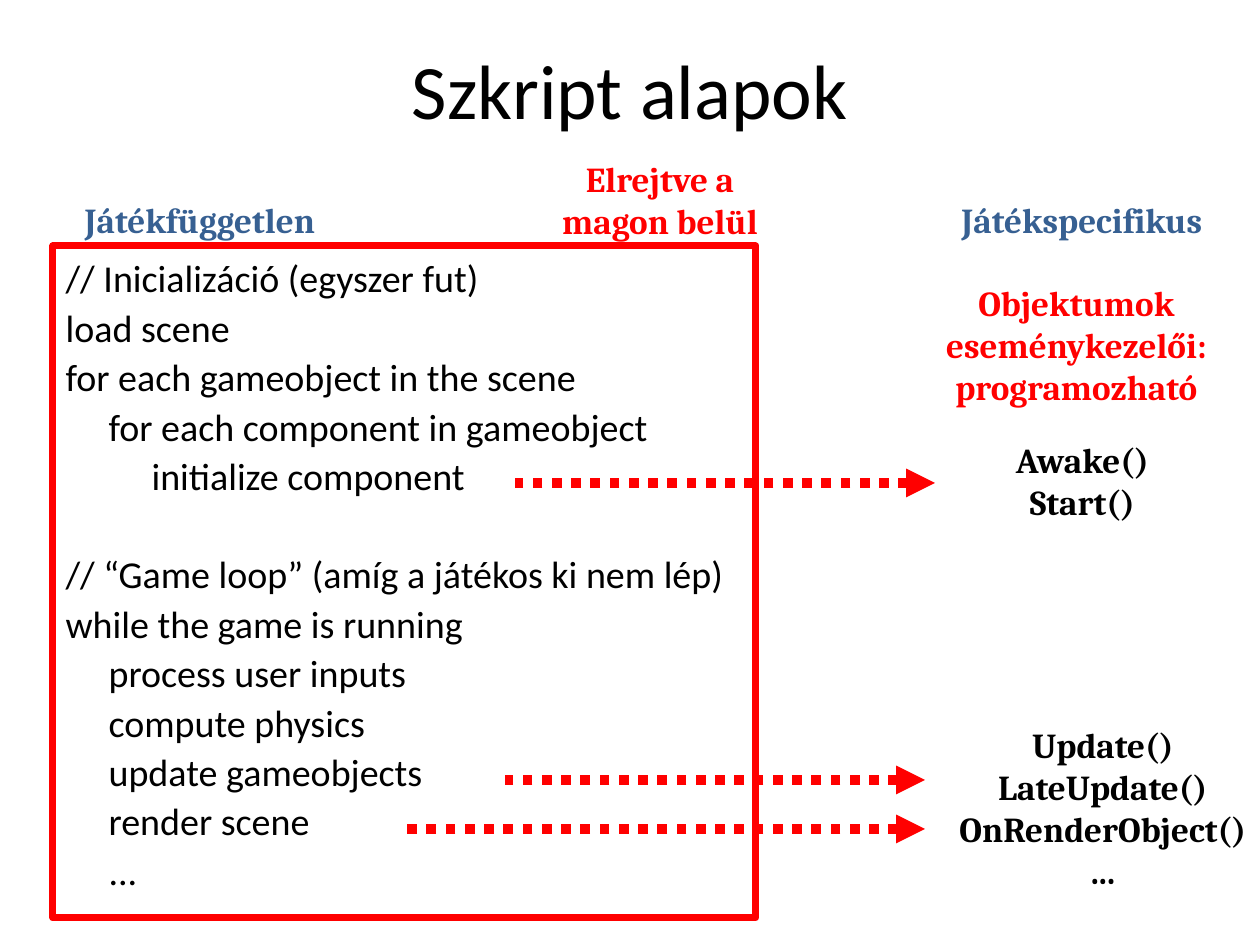
from lxml import etree
from pptx import Presentation
from pptx.dml.color import RGBColor
from pptx.enum import dml, shapes, text
from pptx.oxml.ns import qn
from pptx.util import Emu, Pt

PX = 914400 // 126
BLACK = RGBColor(0, 0, 0)
RED = RGBColor(0xFF, 0, 0)
BLUE = RGBColor(0x37, 0x60, 0x92)

TITLE = "Szkript alapok"
STEP = 43  # indent of one code level
CODE = [  # level, space before in points, line
    (0, 10, "// Inicializáció (egyszer fut)"),
    (0, 10, "load scene"),
    (0, 10, "for each gameobject in the scene"),
    (1, 10, "for each component in gameobject"),
    (2, 10, "initialize component"),
    (0, 38, "// “Game loop” (amíg a játékos ki nem lép)"),
    (0, 10, "while the game is running"),
    (1, 10, "process user inputs"),
    (1, 10, "compute physics"),
    (1, 10, "update gameobjects"),
    (1, 10, "render scene"),
    (1, 10, "..."),
]
LABELS = [  # box, colour, text
    ((988, 432, 189, 97), BLACK, "Awake()\nStart()"),
    ((536, 151, 248, 97), RED, "Elrejtve a magon belül"),
    ((924, 275, 305, 140), RED, "Objektumok eseménykezelői: programozható"),
    ((935, 717, 336, 183), BLACK, "Update()\nLateUpdate()\nOnRenderObject()\n..."),
    ((53, 192, 294, 55), BLUE, "Játékfüggetlen"),
    ((867, 192, 430, 55), BLUE, "Játékspecifikus"),
]
ARROWS = [(515, 935, 483), (505, 925, 780), (399, 925, 829)]  # left, tip, y
FRAME = (53, 246, 703, 672)


def px(*nums):
    return [Emu(n * PX) for n in nums]


def place(shape, box):
    shape.left, shape.top, shape.width, shape.height = px(*box)


def style(par, font, size, color, bold=False):
    for run in par.runs:
        f = run.font
        f.name, f.size, f.bold = font, Pt(size), bold
        f.color.rgb = color


def code(body):
    place(body, (53, 261, 1134, 646))
    frame = body.text_frame
    frame.auto_size = text.MSO_AUTO_SIZE.NONE
    frame.text = "\n".join(line for _, _, line in CODE)
    for par, (level, gap, _) in zip(frame.paragraphs, CODE):
        par.line_spacing, par.space_before = 0.7, Pt(gap)
        prop = par._p.get_or_add_pPr()
        prop.set("marL", str(level * STEP * PX))
        prop.set("indent", "0")
        etree.SubElement(prop, qn("a:buNone"))
        style(par, "Calibri", 21.7, BLACK)


def label(slide, box, color, words):
    frame = slide.shapes.add_textbox(*px(*box)).text_frame
    frame.word_wrap = True
    frame.text = words
    for par in frame.paragraphs:
        par.alignment = text.PP_ALIGN.CENTER
        style(par, "Cambria", 20, color, True)


def arrow(slide, left, tip, y):
    """Dotted arrow whose dots are counted from the tip."""
    link = slide.shapes.add_connector(
        shapes.MSO_CONNECTOR.STRAIGHT, *px(tip, y, left, y))
    link.line.color.rgb = RED
    link.line.width = Pt(5.5)
    link.line.dash_style = dml.MSO_LINE.ROUND_DOT
    etree.SubElement(link.line._get_or_add_ln(), qn("a:headEnd"), type="triangle")
    etree.SubElement(link._element.spPr, qn("a:effectLst"))


def main():
    deck = Presentation()
    deck.slide_width, deck.slide_height = px(1260, 945)
    slide = deck.slides.add_slide(deck.slide_layouts[1])
    title, body = slide.placeholders
    place(title, (63, 10, 1134, 158))
    title.text_frame.text = TITLE
    style(title.text_frame.paragraphs[0], "Calibri", 44, BLACK)
    code(body)
    for item in ARROWS:
        arrow(slide, *item)
    for item in LABELS:
        label(slide, *item)
    frame = slide.shapes.add_shape(shapes.MSO_SHAPE.RECTANGLE, *px(*FRAME))
    frame.shadow.inherit = False
    frame.fill.background()
    frame.line.color.rgb = RED
    frame.line.width = Pt(4)
    deck.save("out.pptx")


if __name__ == "__main__":
    main()
